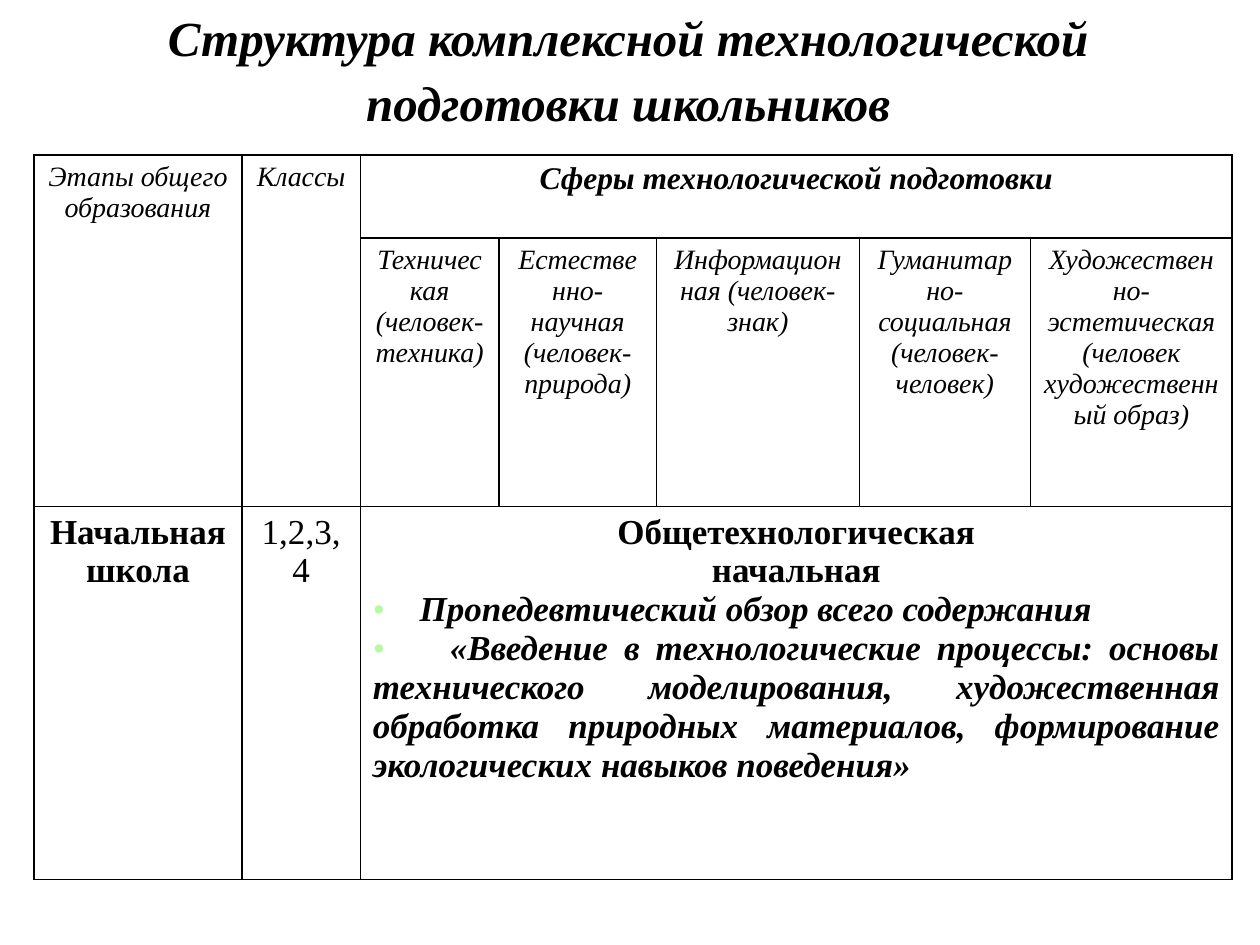
from lxml.etree import SubElement
from pptx import Presentation
from pptx.dml.color import RGBColor
from pptx.enum.text import MSO_ANCHOR, MSO_AUTO_SIZE, PP_ALIGN
from pptx.oxml.ns import qn
from pptx.util import Inches, Pt

FONT = "Times New Roman"
INK = "000000"
BULLET = "B6FBA3"
COLUMNS = [1.65, 0.94, 1.1, 1.25, 1.61, 1.36, 1.6]
ROWS = [0.66, 2.13, 2.96]
SPHERES = [
    ["Техническая", "(человек-техника)"],
    ["Естественно-научная", "(человек- природа)"],
    ["Информационная (человек-знак)"],
    ["Гуманитарно-социальная (человек-человек)"],
    ["Художественно-эстетическая", "(человек художественный образ)"],
]
TOPICS = [
    ("Пропедевтический обзор всего содержания", 0.37),
    ("«Введение в технологические процессы: основы технического моделирования, "
     "художественная обработка природных материалов, формирование экологических "
     "навыков поведения»", 0.61),
]


def color(value):
    """Turn a hex string into a colour."""
    return RGBColor.from_string(value)


def style(para, size, bold=False, italic=False, align=PP_ALIGN.CENTER):
    """Format a whole paragraph."""
    para.alignment = align
    font = para.font
    font.name, font.size, font.bold, font.italic = FONT, Pt(size), bold, italic
    font.color.rgb = color(INK)


def write(cell, lines, size, bold=False, italic=False):
    """Fill a cell with one centred paragraph for each line."""
    cell.text = "\n".join(lines)
    for para in cell.text_frame.paragraphs:
        style(para, size, bold, italic)


def add_topic(cell, text, tab):
    """Append a justified bullet whose text starts at a tab stop."""
    para = cell.text_frame.add_paragraph()
    para.text = "\t" + text
    style(para, 20, True, True, PP_ALIGN.JUSTIFY)
    props = para._p.get_or_add_pPr()
    props.set("marL", "0")
    props.set("indent", "0")
    tint = SubElement(SubElement(props, qn("a:buClr")), qn("a:srgbClr"))
    tint.set("val", BULLET)
    SubElement(props, qn("a:buFont")).set("typeface", FONT)
    SubElement(props, qn("a:buChar")).set("char", "•")
    stop = SubElement(SubElement(props, qn("a:tabLst")), qn("a:tab"))
    stop.set("pos", str(Inches(tab)))
    stop.set("algn", "l")
    props.append(props.find(qn("a:defRPr")))


def frame(cell):
    """Give a cell black borders and no fill."""
    props = cell._tc.get_or_add_tcPr()
    for side in ("a:lnL", "a:lnR", "a:lnT", "a:lnB"):
        line = SubElement(props, qn(side), w=str(Pt(1)))
        fill = SubElement(line, qn("a:solidFill"))
        SubElement(fill, qn("a:srgbClr")).set("val", INK)
    cell.fill.background()


def place_title(page, left, top, width, height):
    """Put the heading into the title placeholder."""
    title = page.shapes.title
    title.left, title.top, title.width, title.height = map(
        Inches, (left, top, width, height))
    body = title.text_frame
    body.text = "Структура комплексной технологической подготовки школьников"
    body.word_wrap = True
    body.auto_size = MSO_AUTO_SIZE.NONE
    body.vertical_anchor = MSO_ANCHOR.MIDDLE
    style(body.paragraphs[0], 28, True, True)
    body.paragraphs[0].line_spacing = 1.1


def place_table(page, left, top, width, height):
    """Build the table of training stages, classes and spheres."""
    table = page.shapes.add_table(
        len(ROWS), len(COLUMNS), *map(Inches, (left, top, width, height))).table
    table.first_row = table.horz_banding = False
    for column, size in zip(table.columns, COLUMNS):
        column.width = Inches(size)
    for row, size in zip(table.rows, ROWS):
        row.height = Inches(size)
    for cell in table.iter_cells():
        frame(cell)
    for start, end in [((0, 0), (1, 0)), ((0, 1), (1, 1)),
                       ((0, 2), (0, 6)), ((2, 2), (2, 6))]:
        table.cell(*start).merge(table.cell(*end))

    write(table.cell(0, 0), ["Этапы общего образования"], 16, italic=True)
    write(table.cell(0, 1), ["Классы"], 16, italic=True)
    write(table.cell(0, 2), ["Сферы технологической подготовки"], 18, True, True)
    for index, lines in enumerate(SPHERES, start=2):
        write(table.cell(1, index), lines, 16, italic=True)
    write(table.cell(2, 0), ["Начальная школа"], 20, True)
    write(table.cell(2, 1), ["1,2,3,4"], 20)
    content = table.cell(2, 2)
    write(content, ["Общетехнологическая", "начальная"], 20, True)
    for text, tab in TOPICS:
        add_topic(content, text, tab)


def main():
    """Build and save the deck."""
    deck = Presentation()
    deck.slide_width, deck.slide_height = Inches(10), Inches(7.5)
    page = deck.slides.add_slide(deck.slide_layouts[5])
    place_title(page, 0.2, 0.01, 9.57, 1.04)
    place_table(page, 0.27, 1.23, sum(COLUMNS), sum(ROWS))
    deck.save("out.pptx")


if __name__ == "__main__":
    main()
